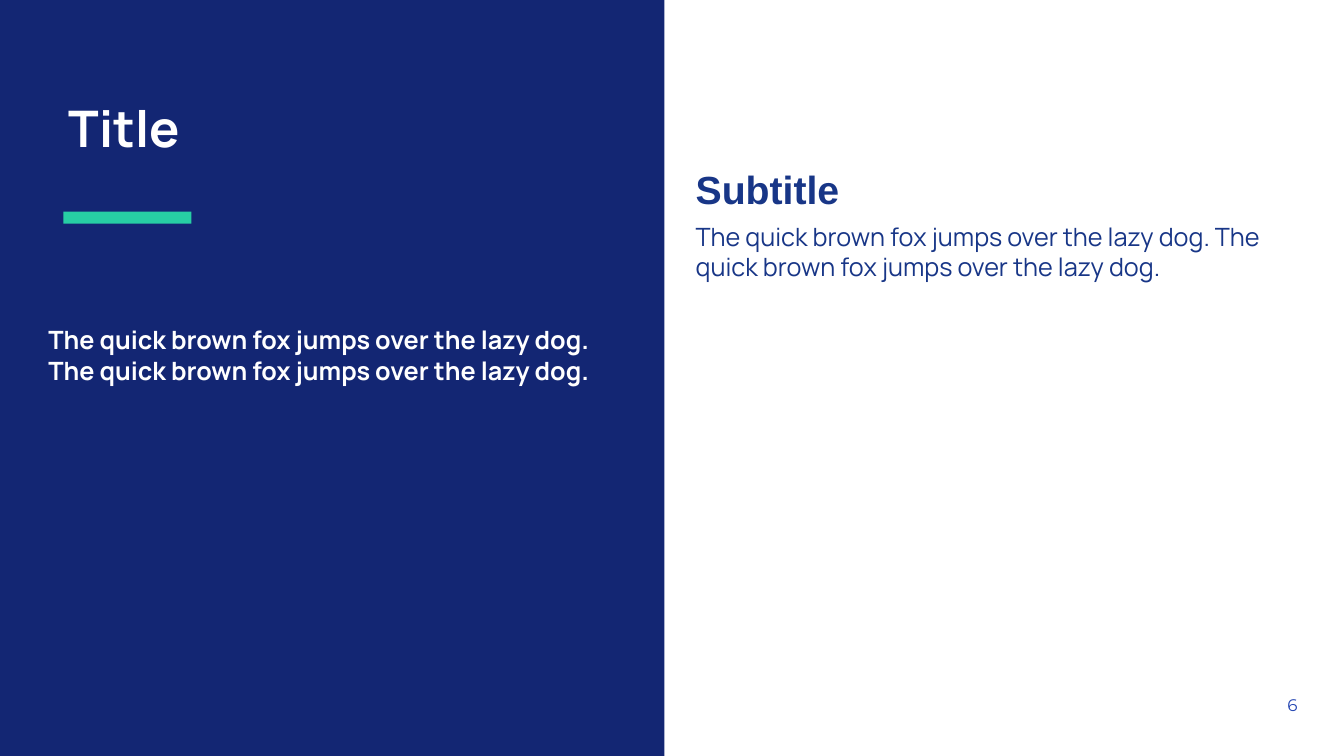
import pptx
import pptx.dml.color
import pptx.enum.shapes
import pptx.enum.text
import pptx.oxml.ns
import pptx.util
from lxml import etree

Inches, Pt = pptx.util.Inches, pptx.util.Pt
Anchor = pptx.enum.text.MSO_ANCHOR
AutoSize = pptx.enum.text.MSO_AUTO_SIZE
Align = pptx.enum.text.PP_ALIGN

NAVY, TEAL, WHITE, BLUE, PAGE_BLUE = "132673", "27CEA4", "FFFFFF", "183687", "2345B2"
TITLE = "Title"
SUBTITLE = "Subtitle"
PANGRAM = "The quick brown fox jumps over the lazy dog. The quick brown fox jumps over the lazy dog."
PAGE_NUMBER = "6"

SLIDE_SIZE = (13.33, 7.5)
PANEL_BOX = (0, 0, 6.59, 7.5)
TITLE_BOX = (0.63, 0.27, 6.59, 2.06)
ACCENT_BOX = (0.63, 2.1, 1.27, 0.12)
LEAD_BOX = (0.43, 3.17, 5.61, 1.01)
DETAIL_BOX = (6.85, 1.59, 5.85, 1.26)
PAGE_BOX = (12.69, 6.82, 0.23, 0.34)
INSET = 0.05


def rgb(value):
    return pptx.dml.color.RGBColor.from_string(value)


def add_bar(box, color):
    bar = slide.shapes.add_shape(
        pptx.enum.shapes.MSO_SHAPE.RECTANGLE, *map(Inches, box))
    bar.fill.solid()
    bar.fill.fore_color.rgb = rgb(color)
    bar.line.fill.background()
    bar.shadow.inherit = False
    return bar


def place(shape, box, anchor=Anchor.TOP, wrap=True, auto_size=AutoSize.SHAPE_TO_FIT_TEXT):
    """Position a text shape and return its prepared text frame."""
    shape.left, shape.top, shape.width, shape.height = map(Inches, box)
    frame = shape.text_frame
    frame.margin_left = frame.margin_right = Inches(INSET)
    frame.margin_top = frame.margin_bottom = Inches(INSET)
    frame.vertical_anchor = anchor
    frame.word_wrap = wrap
    frame.auto_size = auto_size
    return frame


def write(paragraph, text, size=18, font="Manrope", color=BLUE, bold=False,
          align=Align.LEFT, before=0, spacing=1.0):
    properties = paragraph._p.get_or_add_pPr()
    properties.set("marL", "0")
    properties.set("indent", "0")
    etree.SubElement(properties, pptx.oxml.ns.qn("a:buNone"))
    paragraph.alignment = align
    paragraph.space_before = Pt(before)
    paragraph.line_spacing = spacing
    run = paragraph.add_run()
    run.text = text
    run.font.size = Pt(size)
    run.font.name = font
    run.font.bold = bold
    run.font.color.rgb = rgb(color)


deck = pptx.Presentation()
deck.slide_width, deck.slide_height = map(Inches, SLIDE_SIZE)
two_content = deck.slide_layouts[3]
slide = deck.slides.add_slide(two_content)
title, lead, detail = slide.placeholders

panel = add_bar(PANEL_BOX, NAVY)
slide.shapes._spTree.insert(2, panel._element)  # behind the placeholders
add_bar(ACCENT_BOX, TEAL)

title_frame = place(title, TITLE_BOX, anchor=Anchor.MIDDLE, auto_size=AutoSize.NONE)
write(title_frame.paragraphs[0], TITLE, size=36, color=WHITE, bold=True, spacing=0.9)

lead_frame = place(lead, LEAD_BOX)
write(lead_frame.paragraphs[0], PANGRAM, color=WHITE, bold=True)

detail_frame = place(detail, DETAIL_BOX)
write(detail_frame.paragraphs[0], SUBTITLE, size=28, font="Arial", bold=True)
write(detail_frame.add_paragraph(), PANGRAM, before=6)

page = slide.shapes.add_textbox(*map(Inches, PAGE_BOX))
page_frame = place(page, PAGE_BOX, anchor=Anchor.MIDDLE, wrap=False)
write(page_frame.paragraphs[0], PAGE_NUMBER, size=12, font="Montserrat",
      color=PAGE_BLUE, align=Align.RIGHT)

deck.save("out.pptx")
